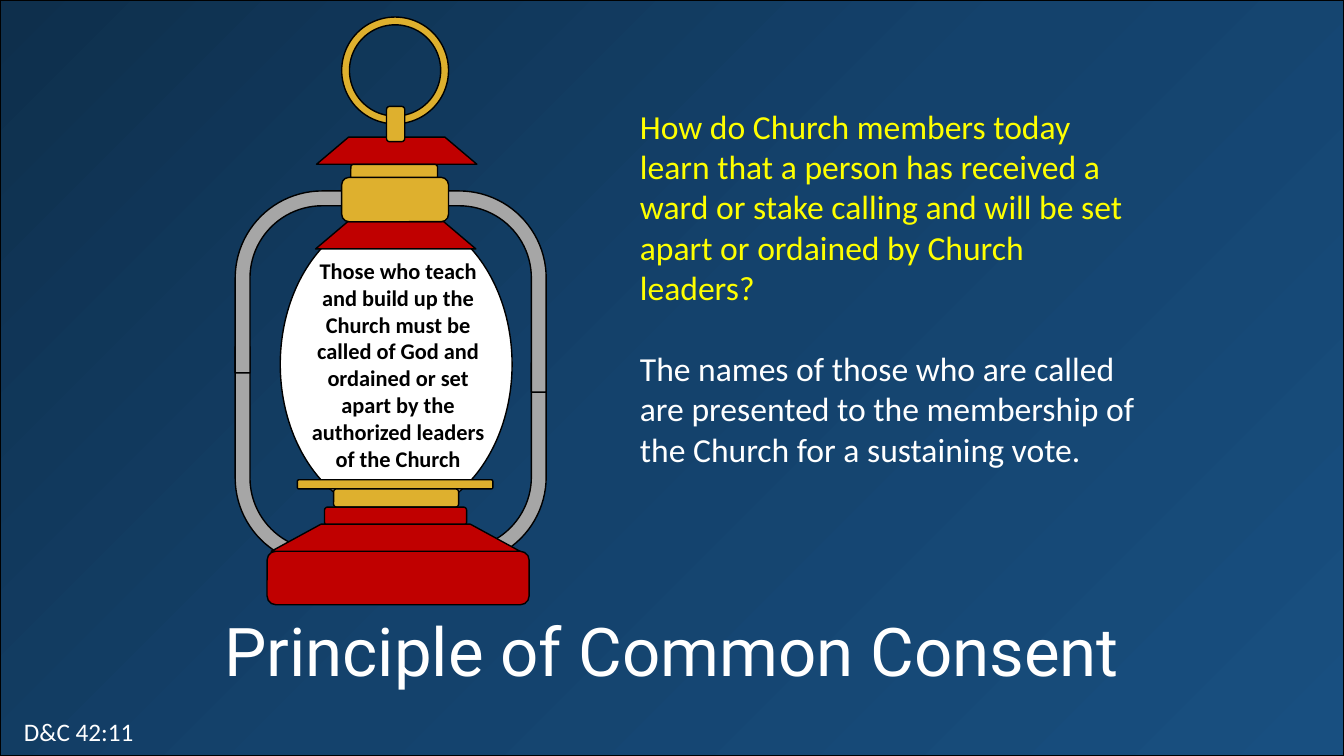
from copy import deepcopy
from dataclasses import dataclass

from pptx import Presentation
from pptx.dml.color import RGBColor as RGB
from pptx.enum.shapes import MSO_SHAPE as SHAPE
from pptx.enum.text import MSO_AUTO_SIZE as AUTO_SIZE, PP_ALIGN as ALIGN
from pptx.oxml.ns import qn
from pptx.util import Pt


@dataclass(frozen=True)
class Theme:
    night: tuple = ((0, "0E2F4C"), (0.5, "14426C"), (1, "184F80"))
    outline: str = "000000"
    ink: str = "000000"
    white: str = "FFFFFF"
    question: str = "FFFF00"
    red: str = "C00000"
    brass: str = "DEB02E"
    steel: str = "A6A6A6"
    body_font: str = "Calibri"
    title_font: str = "Roboto"
    title_size: int = 48
    body_size: int = 24
    reference_size: int = 18
    globe_size: int = 16


THEME = Theme()
SLIDE_BOX = (0, 0, 960, 540)
LANTERN_BOX = (168, 12, 226, 420)
DISCUSSION_BOX = (450, 72, 372, 269)
TITLE_BOX = (120, 432, 720, 65.5)
REFERENCE_BOX = (10, 508.3, 234, 29)

FRAME_BENDS = (0.098, 0.139, 0.119, 0.576)


def add_part(shapes, kind, box, color=None, bends=(), rotation=0):
    part = shapes.add_shape(kind, *map(Pt, box))
    part.shadow.inherit = False
    part.line.color.rgb = RGB.from_string(THEME.outline)
    part.line.width = Pt(1)
    part.rotation = rotation
    if color:
        part.fill.solid()
        part.fill.fore_color.rgb = RGB.from_string(color)
    for index, bend in enumerate(bends):
        part.adjustments[index] = bend
    return part


def add_text(shapes, box, entries, size, font=THEME.body_font,
             align=ALIGN.LEFT, bold=False, gap=0):
    """Write (text, colour) entries as paragraphs, with gap points between them."""
    frame = shapes.add_textbox(*map(Pt, box)).text_frame
    frame.word_wrap = True
    frame.auto_size = AUTO_SIZE.SHAPE_TO_FIT_TEXT
    for index, (text, color) in enumerate(entries):
        paragraph = frame.add_paragraph() if index else frame.paragraphs[0]
        paragraph.text = text
        paragraph.alignment = align
        paragraph.space_before = Pt(gap if index else 0)
        paragraph.font.name = font
        paragraph.font.size = Pt(size)
        paragraph.font.bold = bold
        paragraph.font.color.rgb = RGB.from_string(color)


def add_backdrop(shapes, box):
    fill = add_part(shapes, SHAPE.RECTANGLE, box).fill
    fill.gradient()
    fill.gradient_angle = 315
    stop_list = shapes[-1].element.spPr.find(qn("a:gradFill")).find(qn("a:gsLst"))
    stop_list.insert(1, deepcopy(stop_list[0]))
    for stop, (position, color) in zip(fill.gradient_stops, THEME.night):
        stop.position = position
        stop.color.rgb = RGB.from_string(color)


def add_lantern(shapes, box):
    left, top, _, _ = box
    group = shapes.add_group_shape().shapes

    def place(x, y, width, height):
        return left + x, top + y, width, height

    frame_arms = (
        ((114.2, 247.2, 108, 153.4), ("flipH", "flipV")),
        ((114.2, 114.7, 108, 153.4), ("flipH",)),
        ((0, 235.7, 108, 165.6), ("flipV",)),
        ((0, 114.7, 108, 139.7), ()),
    )
    for spot, flips in frame_arms:
        arm = add_part(group, SHAPE.BENT_ARROW, place(*spot), THEME.steel, FRAME_BENDS)
        for flip in flips:
            arm.element.spPr.find(qn("a:xfrm")).set(flip, "1")

    add_part(group, SHAPE.OVAL, place(32.2, 139.9, 165.6, 216.7), THEME.white)

    hood, bar = SHAPE.FLOWCHART_MANUAL_OPERATION, SHAPE.ROUNDED_RECTANGLE
    red, brass = THEME.red, THEME.brass
    fittings = (
        (hood, (57.4, 146.4, 114.5, 19.4), red),
        (hood, (58.1, 85.9, 114.5, 19.4), red),
        (bar, (82.6, 105.4, 61.9, 10.8), brass),
        (bar, (76.1, 114.7, 76.3, 31.7), brass),
        (SHAPE.DONUT, (76.1, 0.2, 76.3, 76.3), brass),
        (bar, (108.1, 64, 13, 25.2), brass),
        (bar, (44.4, 330.7, 139.7, 6.5), brass),
        (bar, (22.8, 381.8, 187.2, 38.2), red),
        (bar, (70.3, 337.2, 89.3, 13), brass),
        (bar, (63.8, 350.2, 101.5, 13), red),
        (hood, (25.7, 362.4, 177.8, 19.4), red),
    )
    for kind, spot, color in fittings:
        add_part(group, kind, place(*spot), color,
                 bends=(0.073,) if kind == SHAPE.DONUT else (),
                 rotation=180 if kind == hood else 0)

    add_text(group, place(44.4, 168, 144, 162.7),
             [("Those who teach and build up the Church must be called of God and "
               "ordained or set apart by the authorized leaders of the Church", THEME.ink)],
             THEME.globe_size, align=ALIGN.CENTER, bold=True)


def add_discussion(shapes, box):
    add_text(shapes, box, [
        ("How do Church members today learn that a person has received a ward or stake "
         "calling and will be set apart or ordained by Church leaders?", THEME.question),
        ("The names of those who are called are presented to the membership of the Church "
         "for a sustaining vote.", THEME.white),
    ], THEME.body_size, gap=29)


def main():
    deck = Presentation()
    deck.slide_width, deck.slide_height = map(Pt, SLIDE_BOX[2:])
    shapes = deck.slides.add_slide(deck.slide_layouts[6]).shapes
    add_backdrop(shapes, SLIDE_BOX)
    add_text(shapes, REFERENCE_BOX, [("D&C 42:11", THEME.white)], THEME.reference_size)
    add_discussion(shapes, DISCUSSION_BOX)
    add_text(shapes, TITLE_BOX, [("Principle of Common Consent", THEME.white)],
             THEME.title_size, THEME.title_font, ALIGN.CENTER)
    add_lantern(shapes, LANTERN_BOX)
    deck.save("out.pptx")


if __name__ == "__main__":
    main()
